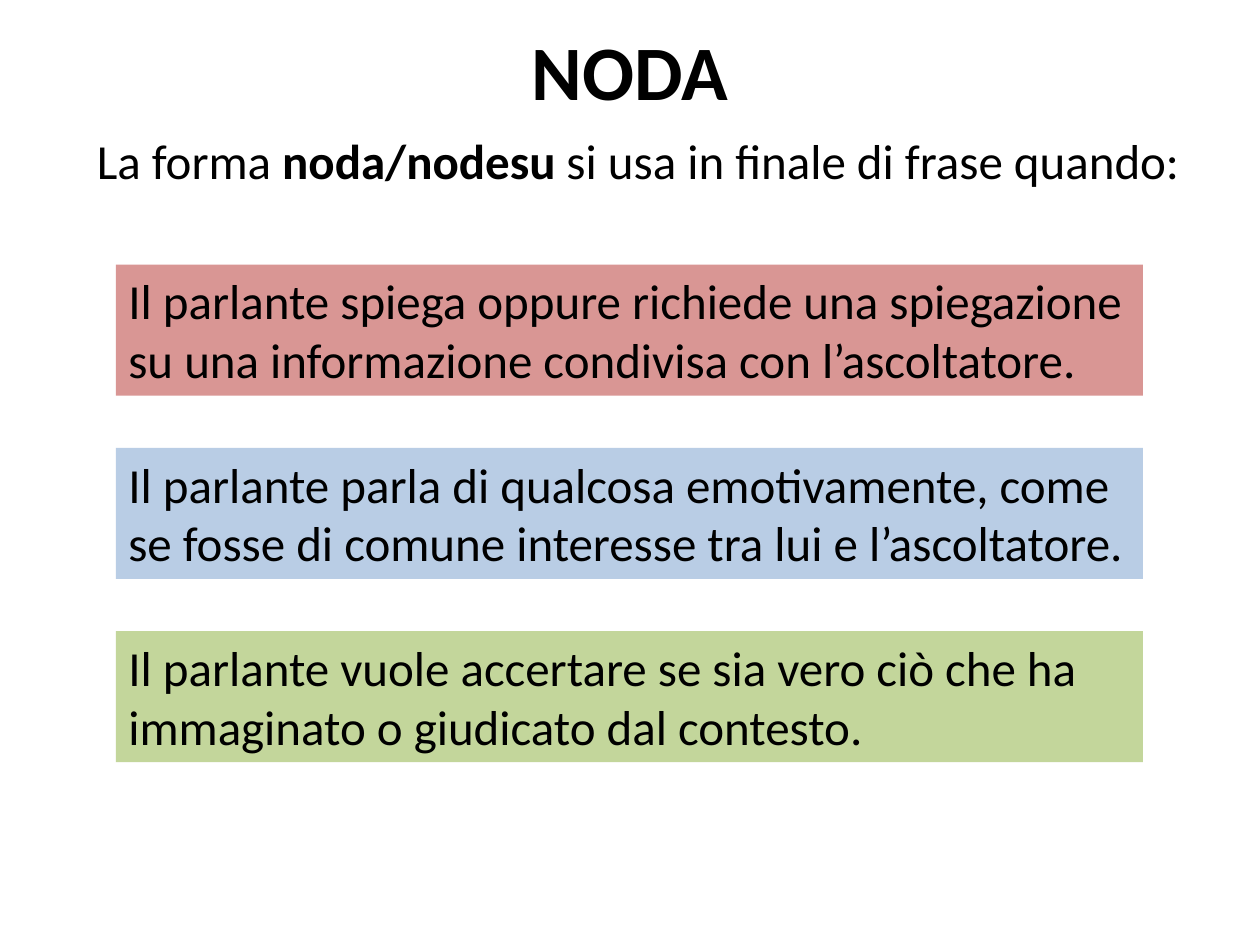
"""Build a slide on the uses of the Japanese noda/nodesu form."""
from dataclasses import dataclass

from pptx import Presentation
from pptx.dml.color import RGBColor
from pptx.enum.shapes import MSO_SHAPE
from pptx.enum.text import MSO_ANCHOR, PP_ALIGN
from pptx.util import Inches, Pt

HEADING = [("NODA", True)]
INTRO = [
    ("La forma ", False),
    ("noda/nodesu", True),
    (" si usa in finale di frase quando:", False),
]
USES = [
    ("Il parlante spiega oppure richiede una spiegazione su una informazione "
     "condivisa con l’ascoltatore.", "D99694"),
    ("Il parlante parla di qualcosa emotivamente, come se fosse di comune "
     "interesse tra lui e l’ascoltatore.", "B9CDE5"),
    ("Il parlante vuole accertare se sia vero ciò che ha immaginato o "
     "giudicato dal contesto.", "C3D69B"),
]


@dataclass(frozen=True)
class Theme:
    font: str = "Calibri"
    ink: str = "000000"
    heading_size: int = 44
    body_size: int = 28


THEME = Theme()
USE_LEFT, USE_TOP, USE_WIDTH, USE_HEIGHT = 0.92, 2.1, 8.15, 1.04
USE_PITCH = 1.455


def write(frame, runs, size=THEME.body_size, align=PP_ALIGN.LEFT,
          anchor=MSO_ANCHOR.TOP):
    frame.word_wrap = True
    frame.vertical_anchor = anchor
    paragraph = frame.paragraphs[0]
    paragraph.alignment = align
    for words, bold in runs:
        run = paragraph.add_run()
        run.text = words
        run.font.name = THEME.font
        run.font.size = Pt(size)
        run.font.bold = bold
        run.font.color.rgb = RGBColor.from_string(THEME.ink)


def main():
    deck = Presentation()
    deck.slide_width, deck.slide_height = Inches(10), Inches(7.5)
    slide = deck.slides.add_slide(deck.slide_layouts[5])

    heading = slide.shapes.title
    heading.left, heading.top = Inches(0.5), Inches(0.13)
    heading.width, heading.height = Inches(9), Inches(0.85)
    write(heading.text_frame, HEADING, size=THEME.heading_size,
          align=PP_ALIGN.CENTER, anchor=MSO_ANCHOR.MIDDLE)

    intro = slide.shapes.add_textbox(
        Inches(0.67), Inches(0.99), Inches(9.06), Inches(0.57))
    write(intro.text_frame, INTRO)

    for row, (explanation, color) in enumerate(USES):
        use = slide.shapes.add_shape(
            MSO_SHAPE.RECTANGLE, Inches(USE_LEFT),
            Inches(USE_TOP + row * USE_PITCH),
            Inches(USE_WIDTH), Inches(USE_HEIGHT))
        use.shadow.inherit = False
        use.fill.solid()
        use.fill.fore_color.rgb = RGBColor.from_string(color)
        use.line.fill.background()
        write(use.text_frame, [(explanation, False)])

    deck.save("out.pptx")


if __name__ == "__main__":
    main()
